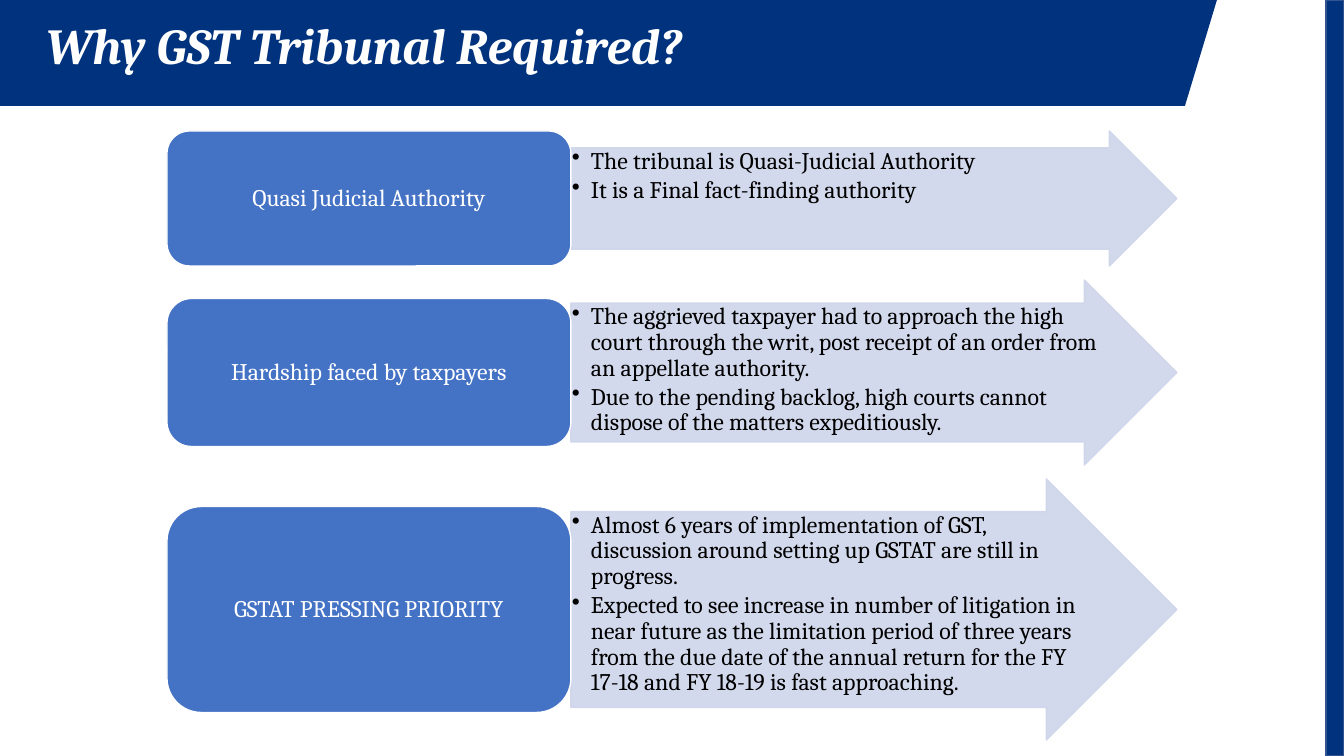
from lxml.etree import SubElement
from pptx import Presentation
from pptx.dml.color import RGBColor
from pptx.enum.shapes import MSO_SHAPE
from pptx.enum.text import MSO_ANCHOR, PP_ALIGN
from pptx.oxml.ns import qn
from pptx.util import Pt

EMU_PER_PX = 914400 / 100.8
WIDTH, HEIGHT = 1344, 756
FONT = "Cambria"
NAVY, BLUE, PALE, WHITE, BLACK = "00327D", "4472C4", "CFD5EA", "FFFFFF", "000000"
ROW_GAP = 14
LABEL_WIDTH = 404
BULLET_INDENT = 19

ROWS = [
    (135, 135, "Quasi Judicial Authority", [
        "The tribunal is Quasi-Judicial Authority",
        "It is a Final fact-finding authority",
    ]),
    (185, 148, "Hardship faced by taxpayers", [
        "The aggrieved taxpayer had to approach the high court through the writ, "
        "post receipt of an order from an appellate authority.",
        "Due to the pending backlog, high courts cannot dispose of the matters expeditiously.",
    ]),
    (261, 206, "GSTAT PRESSING PRIORITY", [
        "Almost 6 years of implementation of GST, discussion around setting up GSTAT "
        "are still in progress.",
        "Expected to see increase in number of litigation in near future as the limitation "
        "period of three years from the due date of the annual return for the FY 17-18 "
        "and FY 18-19 is fast approaching.",
    ]),
]


def px(length):
    """Turn pixels into EMU."""
    return round(length * EMU_PER_PX)


def color(value):
    """Turn a hex string into a colour."""
    return RGBColor.from_string(value)


def paint(shape, fill, line=None, opacity=None):
    """Set fill, outline and opacity, without a shadow."""
    shape.shadow.inherit = False
    shape.fill.solid()
    shape.fill.fore_color.rgb = color(fill)
    if line:
        shape.line.color.rgb = color(line)
        shape.line.width = Pt(1)
    else:
        shape.line.fill.background()
    if opacity:
        for tint in shape.element.spPr.iter(qn("a:srgbClr")):
            SubElement(tint, qn("a:alpha"), val=str(opacity * 1000))


def add_block(slide, kind, box, fill, line, opacity=None):
    """Add a painted preset shape in the given box."""
    shape = slide.shapes.add_shape(kind, *map(px, box))
    paint(shape, fill, line, opacity)
    return shape


def write(shape, texts, size, text_color, align, anchor, margins, space_after=0):
    """Fill a shape with paragraphs of one style and return them."""
    frame = shape.text_frame
    frame.word_wrap = True
    frame.vertical_anchor = anchor
    frame.margin_left = frame.margin_right = px(margins[0])
    frame.margin_top = frame.margin_bottom = px(margins[1])
    frame.text = "\n".join(texts)
    for paragraph in frame.paragraphs:
        paragraph.alignment = align
        paragraph.line_spacing = 0.9
        paragraph.space_after = Pt(space_after)
        paragraph.font.name = FONT
        paragraph.font.size = Pt(size)
        paragraph.font.color.rgb = color(text_color)
    return frame.paragraphs


def add_bullet(paragraph):
    """Give a paragraph a hanging bullet."""
    properties = paragraph._p.get_or_add_pPr()
    properties.set("marL", str(px(BULLET_INDENT)))
    properties.set("indent", str(-px(BULLET_INDENT)))
    SubElement(properties, qn("a:buChar"), char="•")


def add_header(slide, left, top, width, height):
    """Draw the slanted title band and its title."""
    right, bottom = left + width, top + height
    builder = slide.shapes.build_freeform(left, top, scale=EMU_PER_PX)
    builder.add_line_segments([(left, bottom), (right - 32, bottom), (right, top)])
    paint(builder.convert_to_shape(), NAVY)
    title = slide.shapes.add_textbox(*map(px, (left + 36, top + 16, 926, 64)))
    paragraph, = write(title, ["Why GST Tribunal Required?"], 36, WHITE,
                       PP_ALIGN.LEFT, MSO_ANCHOR.MIDDLE, (10, 5))
    paragraph.font.bold = paragraph.font.italic = True


def add_row(slide, left, top, width, height, label_height, label, points):
    """Draw a label with an arrow of bullet points beside it."""
    arrow_box = (left + LABEL_WIDTH, top, width - LABEL_WIDTH, height)
    arrow = add_block(slide, MSO_SHAPE.RIGHT_ARROW, arrow_box, PALE, PALE, 90)
    arrow.adjustments[0], arrow.adjustments[1] = 0.75, 0.5
    for paragraph in write(arrow, points, 17, BLACK, PP_ALIGN.LEFT,
                           MSO_ANCHOR.TOP, (1, 1), 2.5):
        add_bullet(paragraph)
    label_box = (left, top + (height - label_height) / 2, LABEL_WIDTH, label_height)
    block = add_block(slide, MSO_SHAPE.ROUNDED_RECTANGLE, label_box, BLUE, WHITE)
    write(block, [label], 17, WHITE, PP_ALIGN.CENTER, MSO_ANCHOR.MIDDLE, (7, 4))


def add_rows(slide, left, top, width):
    """Stack the rows with equal gaps."""
    for height, label_height, label, points in ROWS:
        add_row(slide, left, top, width, height, label_height, label, points)
        top += height + ROW_GAP


def main():
    """Build and save the slide."""
    presentation = Presentation()
    presentation.slide_width, presentation.slide_height = px(WIDTH), px(HEIGHT)
    slide = presentation.slides.add_slide(presentation.slide_layouts[6])
    add_header(slide, 0, 0, 1217, 106)
    add_block(slide, MSO_SHAPE.RECTANGLE, (WIDTH - 18, 0, 18, HEIGHT), NAVY, "325491")
    add_rows(slide, 167, 131, 1010)
    presentation.save("out.pptx")


if __name__ == "__main__":
    main()
